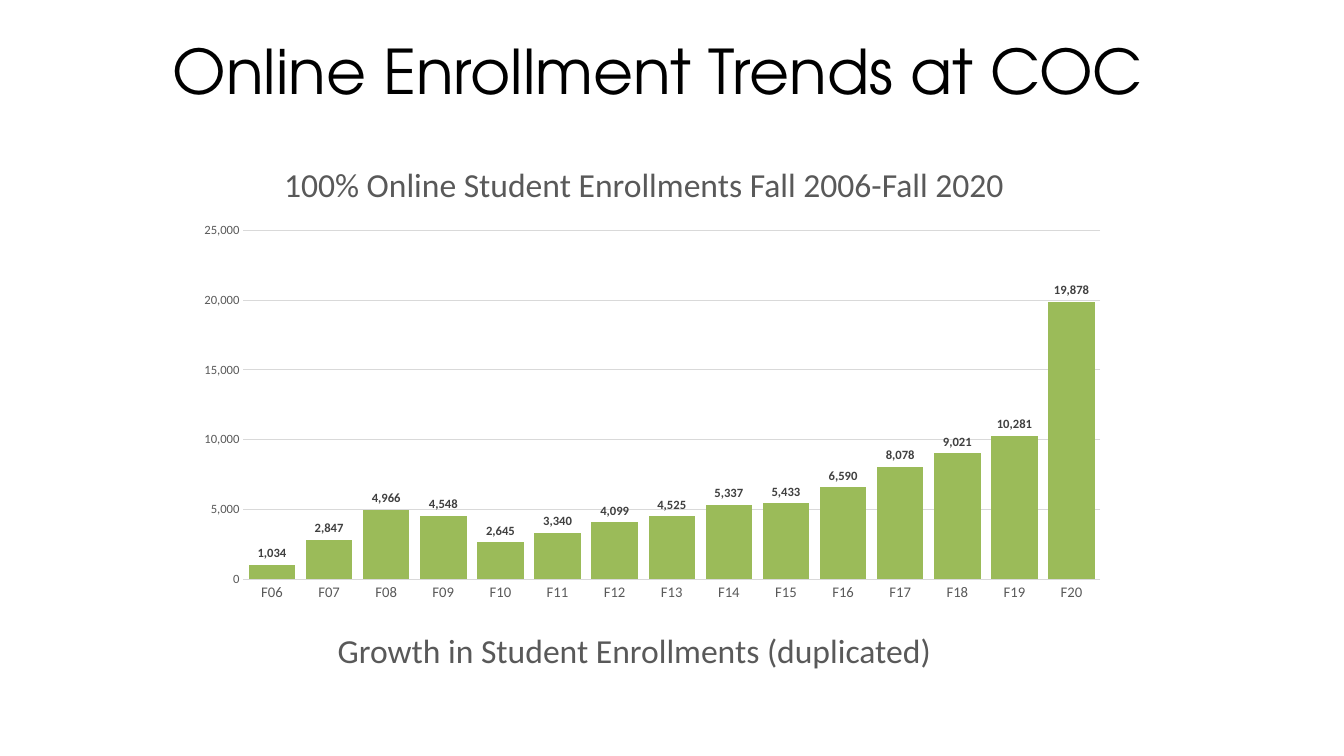
from dataclasses import dataclass

from lxml.etree import SubElement
from pptx import Presentation
from pptx.chart.data import CategoryChartData
from pptx.dml.color import RGBColor
from pptx.enum.chart import XL_CHART_TYPE, XL_LABEL_POSITION, XL_TICK_MARK
from pptx.enum.text import MSO_ANCHOR, MSO_AUTO_SIZE, PP_ALIGN
from pptx.oxml import parse_xml
from pptx.oxml.ns import nsdecls, qn
from pptx.util import Pt


@dataclass(frozen=True)
class Theme:
    heading_font: str = "TeX Gyre Adventor"
    body_font: str = "Calibri"
    black: RGBColor = RGBColor(0x00, 0x00, 0x00)
    grey: RGBColor = RGBColor(0x59, 0x59, 0x59)
    label: RGBColor = RGBColor(0x40, 0x40, 0x40)
    grid: RGBColor = RGBColor(0xD9, 0xD9, 0xD9)
    green: RGBColor = RGBColor(0x9B, 0xBB, 0x59)
    title_size: float = 44
    subtitle_size: float = 24
    category_size: float = 10.5
    value_size: float = 9


theme = Theme()


def style_font(font, size, color, name=theme.body_font, bold=False):
    font.name, font.size, font.bold = name, Pt(size), bold
    font.color.rgb = color


def write_line(shape, box, text, size, color, align, inset=(0, 0), name=theme.body_font):
    """Place the shape at box and give it one formatted, top-anchored line."""
    shape.left, shape.top, shape.width, shape.height = map(Pt, box)
    frame = shape.text_frame
    frame.text = text
    frame.word_wrap = True
    frame.auto_size = MSO_AUTO_SIZE.NONE
    frame.vertical_anchor = MSO_ANCHOR.TOP
    frame.margin_left = frame.margin_right = Pt(inset[0])
    frame.margin_top = frame.margin_bottom = Pt(inset[1])
    line = frame.paragraphs[0]
    line.alignment = align
    line.space_before = Pt(0)
    style_font(line.runs[0].font, size, color, name)


presentation = Presentation()
presentation.slide_width, presentation.slide_height = Pt(960), Pt(540)
slide = presentation.slides.add_slide(presentation.slide_layouts[1])

write_line(slide.shapes.title, (17.3, 23.8, 905.8, 53.3), "Online Enrollment Trends at COC",
           theme.title_size, theme.black, PP_ALIGN.CENTER, name=theme.heading_font)

caption = slide.placeholders[1]
write_line(caption, (241.2, 450, 478, 60.5), "Growth in Student Enrollments (duplicated)",
           theme.subtitle_size, theme.grey, PP_ALIGN.LEFT)
caption_format = caption.text_frame.paragraphs[0]._p.get_or_add_pPr()
caption_format.set("marL", "0")
caption_format.set("indent", "0")
SubElement(caption_format, qn("a:buNone"))

enrollments = [1034, 2847, 4966, 4548, 2645, 3340, 4099, 4525,
               5337, 5433, 6590, 8078, 9021, 10281, 19878]
chart_data = CategoryChartData(number_format="#,##0")
chart_data.categories = [f"F{year:02}" for year in range(6, 21)]
chart_data.add_series("Series 1", enrollments)
chart = slide.shapes.add_chart(XL_CHART_TYPE.COLUMN_CLUSTERED, Pt(122.4), Pt(156.2),
                               Pt(696.2), Pt(318.2), chart_data).chart
chart.has_title = False
chart.has_legend = False
style_font(chart.font, 10, theme.black)

columns = chart.plots[0]
columns.gap_width = 23
columns.overlap = -27
columns.vary_by_categories = False
fill = columns.series[0].format.fill
fill.solid()
fill.fore_color.rgb = theme.green

columns.has_data_labels = True
labels = columns.data_labels
labels.show_value = True
labels.number_format = "#,##0"
labels.number_format_is_linked = False
labels.position = XL_LABEL_POSITION.OUTSIDE_END
style_font(labels.font, theme.value_size, theme.label, bold=True)

terms, counts = chart.category_axis, chart.value_axis
for axis, size in ((terms, theme.category_size), (counts, theme.value_size)):
    axis.major_tick_mark = axis.minor_tick_mark = XL_TICK_MARK.NONE
    style_font(axis.tick_labels.font, size, theme.grey)
counts.minimum_scale, counts.maximum_scale, counts.major_unit = 0, 25000, 5000
counts.tick_labels.number_format = "#,##0"
counts.tick_labels.number_format_is_linked = False
counts.format.line.fill.background()
for rule in (terms.format.line, counts.major_gridlines.format.line):
    rule.color.rgb = theme.grid
    rule.width = Pt(0.75)

plot_area = chart._chartSpace.chart.plotArea
for layout in plot_area.findall(qn("c:layout")):
    plot_area.remove(layout)
plot_area.insert(0, parse_xml(
    f'<c:layout {nsdecls("c")}><c:manualLayout><c:layoutTarget val="inner"/>'
    '<c:xMode val="edge"/><c:yMode val="edge"/><c:x val="0.074"/><c:y val="0.026"/>'
    '<c:w val="0.879"/><c:h val="0.784"/></c:manualLayout></c:layout>'))

chart_heading = slide.shapes.add_textbox(0, 0, 0, 0)
write_line(chart_heading, (174.2, 113.8, 571.7, 36),
           "100% Online Student Enrollments Fall 2006-Fall 2020",
           theme.subtitle_size, theme.grey, PP_ALIGN.CENTER, inset=(7.2, 3.6))

presentation.save("out.pptx")
